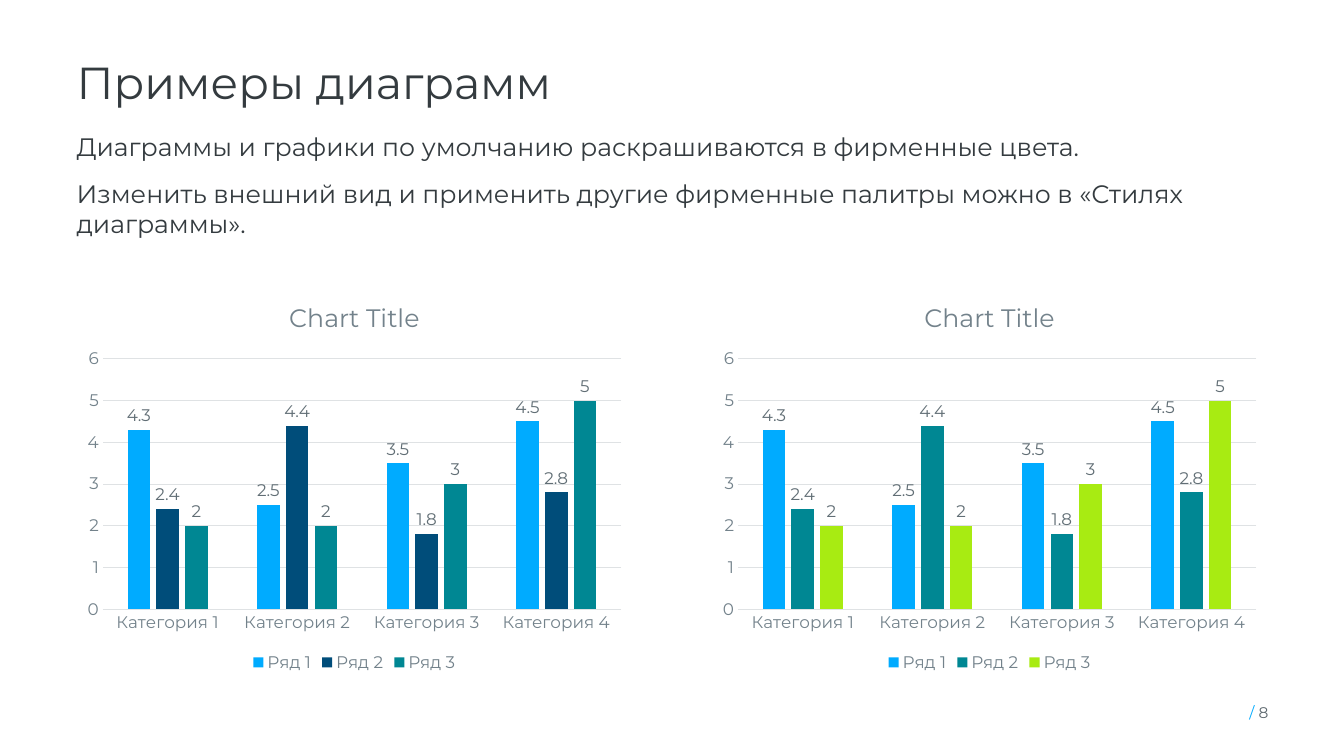
from pptx import Presentation
from pptx.chart.data import CategoryChartData
from pptx.dml.color import RGBColor
from pptx.enum import chart as ch, text as tx
from pptx.util import Inches, Pt

# Content
TITLE = "Примеры диаграмм"
BODY = [
    "Диаграммы и графики по умолчанию раскрашиваются в фирменные цвета.",
    "Изменить внешний вид и применить другие фирменные палитры можно в «Стилях диаграммы».",
]
PAGE = [("/ ", "accent"), ("8", "page")]
HEAD = "Chart Title"
CATS = [f"Категория {n}" for n in range(1, 5)]
ROWS = {
    "Ряд 1": (4.3, 2.5, 3.5, 4.5),
    "Ряд 2": (2.4, 4.4, 1.8, 2.8),
    "Ряд 3": (2, 2, 3, 5),
}
SETS = [("accent", "navy", "teal"), ("accent", "teal", "lime")]


class Theme:
    face = "Montserrat"
    title, body, head, label, base, page = 32, 18, 18, 12, 10, 11
    color = {
        "ink": "343B3F", "page": "5D686E", "axis": "73828B",
        "value": "616E75", "grid": "DFE2E4", "accent": "00ABFF",
        "navy": "004D7A", "teal": "008793", "lime": "A8EB12",
    }


# Layout in inches
LEFT, WIDE = 0.76, 11.81
TOP, CHART_W, CHART_H = 2.8, 5.51, 3.91
STEP = WIDE - CHART_W


def rgb(name):
    return RGBColor.from_string(Theme.color[name])


def style(font, size, color):
    font.name, font.size, font.bold = Theme.face, Pt(size), False
    font.color.rgb = rgb(color)


def line(fmt):
    fmt.line.color.rgb = rgb("grid")
    fmt.line.width = Pt(0.75)


def add_box(slide, *at):
    frame = slide.shapes.add_textbox(*map(Inches, at)).text_frame
    frame.word_wrap = True
    frame.margin_left = frame.margin_right = 0
    frame.margin_top = frame.margin_bottom = 0
    return frame


def add_bars(slide, left, colors):
    data = CategoryChartData()
    data.categories = CATS
    for name, vals in ROWS.items():
        data.add_series(name, vals)
    place = map(Inches, (left, TOP, CHART_W, CHART_H))
    chart = slide.shapes.add_chart(
        ch.XL_CHART_TYPE.COLUMN_CLUSTERED, *place, data).chart
    style(chart.font, Theme.base, "ink")

    # Chart title and legend
    chart.has_title = True
    frame = chart.chart_title.text_frame
    frame.text = HEAD
    style(frame.paragraphs[0].runs[0].font, Theme.head, "axis")
    chart.chart_title.include_in_layout = False
    chart.has_legend = True
    chart.legend.position = ch.XL_LEGEND_POSITION.BOTTOM
    chart.legend.include_in_layout = False
    style(chart.legend.font, Theme.label, "axis")

    # Axes
    for axis in (chart.category_axis, chart.value_axis):
        axis.major_tick_mark = axis.minor_tick_mark = ch.XL_TICK_MARK.NONE
        style(axis.tick_labels.font, Theme.label, "axis")
    line(chart.category_axis.format)
    scale = chart.value_axis
    scale.minimum_scale, scale.maximum_scale, scale.major_unit = 0, 6, 1
    scale.format.line.fill.background()
    line(scale.major_gridlines.format)

    # Bars and values
    plot = chart.plots[0]
    plot.gap_width, plot.overlap = 219, -27
    plot.vary_by_categories = False
    for row, color in zip(plot.series, colors):
        row.format.fill.solid()
        row.format.fill.fore_color.rgb = rgb(color)
        row.invert_if_negative = False
        tags = row.data_labels
        tags.show_value = True
        tags.position = ch.XL_LABEL_POSITION.OUTSIDE_END
        style(tags.font, Theme.label, "value")


def main():
    deck = Presentation()
    deck.slide_width, deck.slide_height = Inches(13.33), Inches(7.5)
    slide = deck.slides.add_slide(deck.slide_layouts[6])

    # Title
    frame = add_box(slide, LEFT, 0.6, WIDE, 1)
    frame.text = TITLE
    para = frame.paragraphs[0]
    para.line_spacing = 0.9
    style(para.runs[0].font, Theme.title, "ink")

    # Body
    frame = add_box(slide, LEFT, 1.3, WIDE, 1.21)
    frame.text = "\n".join(BODY)
    for para in frame.paragraphs:
        para.space_after = Pt(12)
        style(para.runs[0].font, Theme.body, "ink")

    # Charts
    for col, colors in enumerate(SETS):
        add_bars(slide, LEFT + col * STEP, colors)

    # Page number
    frame = add_box(slide, 11.87, 6.94, 0.71, 0.25)
    frame.vertical_anchor = tx.MSO_ANCHOR.MIDDLE
    para = frame.paragraphs[0]
    para.alignment = tx.PP_ALIGN.RIGHT
    for part, color in PAGE:
        run = para.add_run()
        run.text = part
        style(run.font, Theme.page, color)

    deck.save("out.pptx")


if __name__ == "__main__":
    main()
